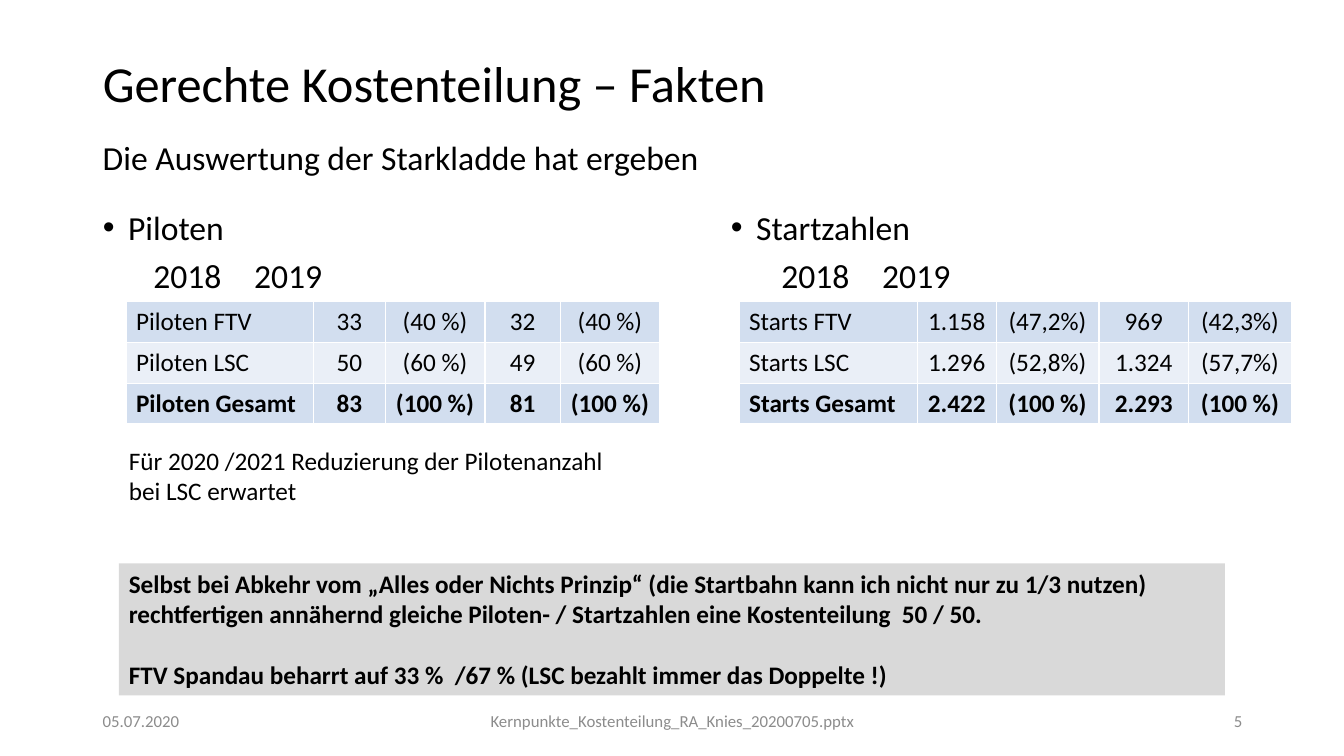
import dataclasses
import typing

import pptx
import pptx.dml.color
import pptx.enum.shapes
import pptx.enum.text
import pptx.oxml
import pptx.oxml.ns
import pptx.util

Inches = pptx.util.Inches
Pt = pptx.util.Pt
RGBColor = pptx.dml.color.RGBColor
Align = pptx.enum.text.PP_ALIGN
Anchor = pptx.enum.text.MSO_ANCHOR

BLACK = RGBColor(0x00, 0x00, 0x00)
FOOTER_GREY = RGBColor(0x8C, 0x8C, 0x8C)
PANEL_GREY = RGBColor(0xD9, 0xD9, 0xD9)
BAND_DARK = RGBColor(0xD2, 0xDE, 0xEF)
BAND_LIGHT = RGBColor(0xEA, 0xEF, 0xF7)
FONT_NAME = "Calibri"
ROW_HEIGHT = 0.4


class Box(typing.NamedTuple):
    left: float
    top: float
    width: float
    height: float

    def lengths(self) -> list:
        return [Inches(value) for value in self]


@dataclasses.dataclass
class Panel:
    heading: str
    body: Box
    table_left: float
    column_widths: list[float]
    rows: list[list[str]]


@dataclasses.dataclass
class Label:
    text: str
    box: Box
    size: float = 18
    color: RGBColor = BLACK
    align: Align = Align.LEFT
    anchor: Anchor = Anchor.TOP


PANELS = [
    Panel("Piloten", Box(0.92, 2, 5.67, 2.82), 1.25, [1.86, 0.71, 0.99, 0.75, 0.98], [
        ["Piloten FTV", "33", "(40 %)", "32", "(40 %)"],
        ["Piloten LSC", "50", "(60 %)", "49", "(60 %)"],
        ["Piloten Gesamt", "83", "(100 %)", "81", "(100 %)"],
    ]),
    Panel("Startzahlen", Box(7.15, 2, 5.67, 2.8), 7.33, [1.77, 0.78, 1.02, 0.89, 1.02], [
        ["Starts FTV", "1.158", "(47,2%)", "969", "(42,3%)"],
        ["Starts LSC", "1.296", "(52,8%)", "1.324", "(57,7%)"],
        ["Starts Gesamt", "2.422", "(100 %)", "2.293", "(100 %)"],
    ]),
]

LABELS = [
    Label("Die Auswertung der Starkladde hat ergeben", Box(0.92, 1.31, 10.41, 0.5), 24),
    Label("Für 2020 /2021 Reduzierung der Pilotenanzahl \vbei LSC erwartet",
          Box(1.18, 4.37, 4.97, 0.71)),
    Label("05.07.2020", Box(0.92, 6.95, 3, 0.4), 12, FOOTER_GREY, Align.LEFT, Anchor.MIDDLE),
    Label("Kernpunkte_Kostenteilung_RA_Knies_20200705.pptx", Box(4.42, 6.95, 4.5, 0.4),
          12, FOOTER_GREY, Align.CENTER, Anchor.MIDDLE),
    Label("5", Box(9.42, 6.95, 3, 0.4), 12, FOOTER_GREY, Align.RIGHT, Anchor.MIDDLE),
]

CONCLUSIONS = [
    "Selbst bei Abkehr vom „Alles oder Nichts Prinzip“ (die Startbahn kann ich nicht nur zu "
    "1/3 nutzen) rechtfertigen annähernd gleiche Piloten- / Startzahlen eine "
    "Kostenteilung  50 / 50.",
    "FTV Spandau beharrt auf 33 %  /67 % (LSC bezahlt immer das Doppelte !)",
]


def write_text(paragraph, text: str, *, size: float = 18, color: RGBColor = BLACK,
               bold: bool = False, align: Align = Align.LEFT, line_spacing: float = 1.0,
               before: float = 0, after: float = 0) -> None:
    paragraph.text = text
    paragraph.alignment = align
    paragraph.line_spacing = line_spacing
    paragraph.space_before = Pt(before)
    paragraph.space_after = Pt(after)
    for run in paragraph.runs:
        run.font.name = FONT_NAME
        run.font.size = Pt(size)
        run.font.bold = bold
        run.font.color.rgb = color


def add_xml(parent, markup: str) -> None:
    namespace = pptx.oxml.ns.nsdecls("a")
    tag, rest = markup[:markup.index(" ")], markup[markup.index(" "):]
    parent.append(pptx.oxml.parse_xml(f"{tag} {namespace}{rest}"))


def set_indent(paragraph, margin: float, first_line: float) -> None:
    properties = paragraph._p.get_or_add_pPr()
    properties.set("marL", str(Inches(margin)))
    properties.set("indent", str(Inches(first_line)))


def place(placeholder, box: Box):
    placeholder.left, placeholder.top, placeholder.width, placeholder.height = box.lengths()
    frame = placeholder.text_frame
    frame.auto_size = pptx.enum.text.MSO_AUTO_SIZE.NONE
    frame.word_wrap = True
    return frame


def fill_body(placeholder, panel: Panel) -> None:
    frame = place(placeholder, panel.body)
    heading = frame.paragraphs[0]
    set_indent(heading, 0.25, -0.25)
    write_text(heading, panel.heading, size=24, after=6)
    add_xml(heading._p.pPr, '<a:buFont typeface="Arial"/>')
    add_xml(heading._p.pPr, '<a:buChar char="•"/>')
    years = frame.add_paragraph()
    set_indent(years, 0, 0)
    write_text(years, "\t2018\t2019", size=24, after=6)
    add_xml(years._p.pPr, "<a:buNone />")
    tabs = "".join(f'<a:tab pos="{Inches(position)}" algn="l"/>' for position in (1, 2))
    add_xml(years._p.pPr, f"<a:tabLst >{tabs}</a:tabLst>")


def add_panel_table(slide, panel: Panel) -> None:
    box = Box(panel.table_left, 2.99, sum(panel.column_widths), ROW_HEIGHT * len(panel.rows))
    table = slide.shapes.add_table(
        len(panel.rows), len(panel.column_widths), *box.lengths()).table
    table.first_row = False
    table.horz_banding = False
    for column, width in zip(table.columns, panel.column_widths):
        column.width = Inches(width)
    for row_index, values in enumerate(panel.rows):
        table.rows[row_index].height = Inches(ROW_HEIGHT)
        for column_index, value in enumerate(values):
            cell = table.cell(row_index, column_index)
            is_number = column_index > 0
            if is_number:
                cell.margin_left = cell.margin_right = Inches(0.05)
            write_text(cell.text_frame.paragraphs[0], value,
                       bold=row_index == len(panel.rows) - 1,
                       align=Align.CENTER if is_number else Align.LEFT)
            for side in "LRTB":
                add_xml(cell._tc.get_or_add_tcPr(),
                        f'<a:ln{side} w="{Pt(1)}"><a:solidFill><a:srgbClr val="FFFFFF"/>'
                        f"</a:solidFill></a:ln{side}>")
            cell.fill.solid()
            cell.fill.fore_color.rgb = BAND_LIGHT if row_index % 2 else BAND_DARK


def add_label(slide, label: Label) -> None:
    frame = slide.shapes.add_textbox(*label.box.lengths()).text_frame
    frame.word_wrap = True
    frame.vertical_anchor = label.anchor
    write_text(frame.paragraphs[0], label.text, size=label.size,
               color=label.color, align=label.align)


def add_conclusion(slide) -> None:
    shape = slide.shapes.add_shape(pptx.enum.shapes.MSO_SHAPE.RECTANGLE,
                                   *Box(1.18, 5.59, 10.97, 1.31).lengths())
    shape.shadow.inherit = False
    shape.fill.solid()
    shape.fill.fore_color.rgb = PANEL_GREY
    shape.line.fill.background()
    frame = shape.text_frame
    frame.word_wrap = True
    frame.vertical_anchor = Anchor.TOP
    write_text(frame.paragraphs[0], CONCLUSIONS[0], bold=True)
    write_text(frame.add_paragraph(), CONCLUSIONS[1], bold=True, before=22)


def main() -> None:
    presentation = pptx.Presentation()
    presentation.slide_width = Inches(13.33)
    presentation.slide_height = Inches(7.5)
    slide = presentation.slides.add_slide(presentation.slide_layouts[3])
    title, *bodies = slide.placeholders
    title_frame = place(title, Box(0.92, 0.4, 11.5, 0.92))
    title_frame.vertical_anchor = Anchor.MIDDLE
    write_text(title_frame.paragraphs[0], "Gerechte Kostenteilung – Fakten",
               size=36, line_spacing=0.9)
    for body, panel in zip(bodies, PANELS):
        fill_body(body, panel)
        add_panel_table(slide, panel)
    for label in LABELS:
        add_label(slide, label)
    add_conclusion(slide)
    presentation.save("out.pptx")


if __name__ == "__main__":
    main()
